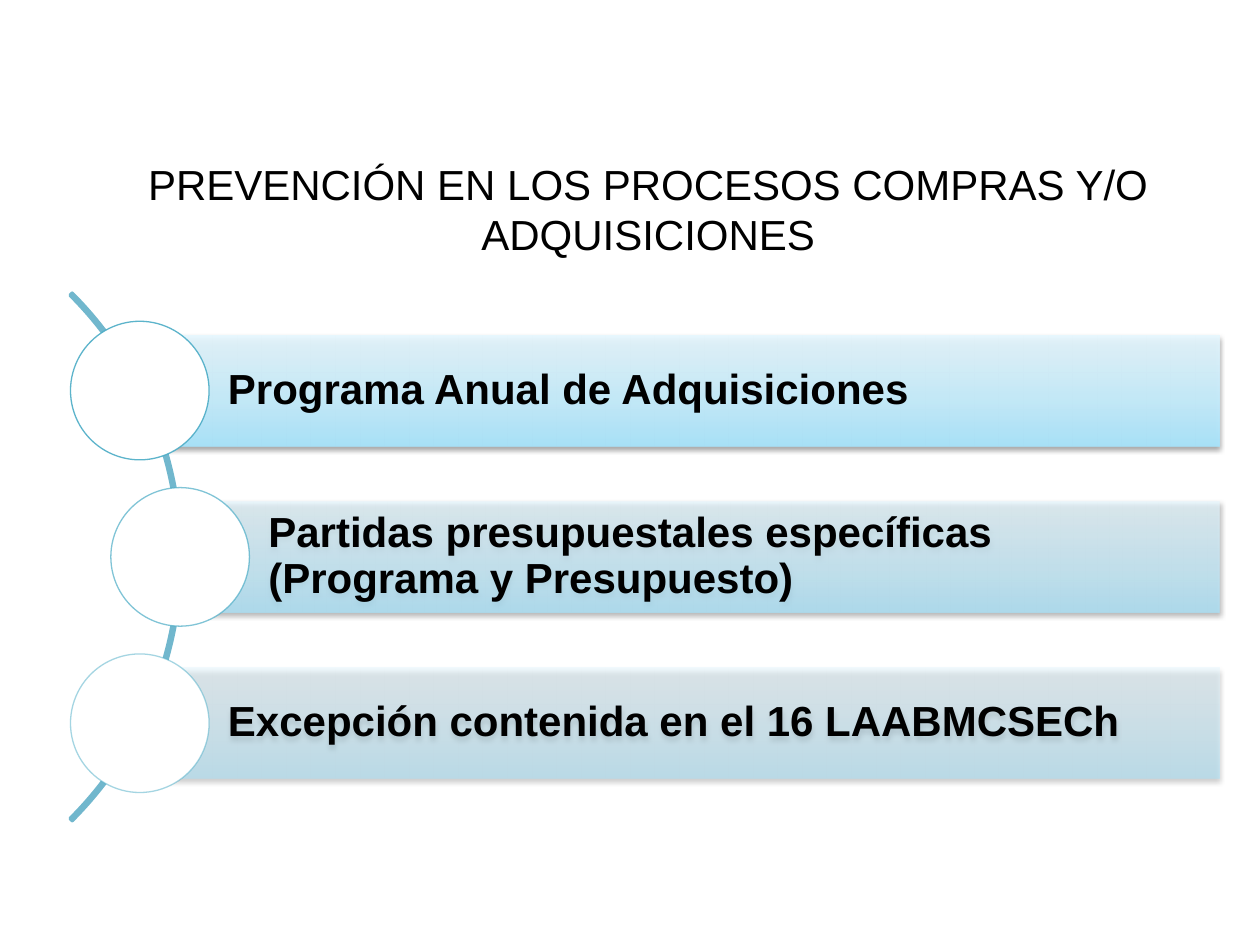
from dataclasses import dataclass

from lxml import etree
from pptx import Presentation
from pptx.dml.color import RGBColor
from pptx.enum.shapes import MSO_SHAPE
from pptx.enum.text import MSO_ANCHOR, MSO_AUTO_SIZE, PP_ALIGN
from pptx.oxml.ns import qn
from pptx.util import Inches, Pt

RECTANGLE, OVAL, BLOCK_ARC = MSO_SHAPE.RECTANGLE, MSO_SHAPE.OVAL, MSO_SHAPE.BLOCK_ARC
MIDDLE, NO_AUTOFIT = MSO_ANCHOR.MIDDLE, MSO_AUTO_SIZE.NONE
LEFT, CENTER = PP_ALIGN.LEFT, PP_ALIGN.CENTER


@dataclass(frozen=True)
class Theme:
    font: str = "Arial"
    size: int = 24
    text: str = "000000"
    circle_fill: str = "FFFFFF"
    circle_line: str = "4BACC6"
    arc: str = "71B7CD"
    shadow: str = "000000"
    gradient: tuple[tuple[int, str], ...] = ((0, "A7E6FF"), (35, "C1EDFF"), (100, "E7F8FF"))


@dataclass(frozen=True)
class Topic:
    label: str
    center_x: float
    opacity: int


THEME = Theme()
TOPICS = (
    Topic("Programa Anual de Adquisiciones", 1.11, 90),
    Topic("Partidas presupuestales específicas (Programa y Presupuesto)", 1.43, 70),
    Topic("Excepción contenida en el 16 LAABMCSECh", 1.11, 50),
)
ARC_CENTER_X, ARC_CENTER_Y, ARC_DIAMETER = -1.52, 4.42, 5.92
ROW_PITCH, BAR_HEIGHT, BAR_RIGHT, CIRCLE_DIAMETER = 1.32, 0.88, 9.68, 1.1


def write_text(shape, text: str, *, bold=False, align=LEFT, line_spacing=1.0,
               insets=(0.1, 0.05, 0.1, 0.05)) -> None:
    frame = shape.text_frame
    frame.word_wrap = True
    frame.auto_size = NO_AUTOFIT
    frame.vertical_anchor = MIDDLE
    frame.margin_left, frame.margin_top, frame.margin_right, frame.margin_bottom = map(Inches, insets)
    frame.text = text
    paragraph = frame.paragraphs[0]
    paragraph.alignment = align
    paragraph.line_spacing = line_spacing
    font = paragraph.runs[0].font
    font.name, font.size, font.bold = THEME.font, Pt(THEME.size), bold
    font.color.rgb = RGBColor.from_string(THEME.text)


def add_color(parent, color: str, opacity: int) -> None:
    node = etree.SubElement(parent, qn("a:srgbClr"), val=color)
    etree.SubElement(node, qn("a:alpha"), val=str(opacity * 1000))


def add_flat_shape(slide, preset, left: float, top: float, width: float, height: float):
    shape = slide.shapes.add_shape(preset, *map(Inches, (left, top, width, height)))
    shape.shadow.inherit = False
    return shape


def add_arc(slide) -> None:
    radius = ARC_DIAMETER / 2
    arc = add_flat_shape(slide, BLOCK_ARC, ARC_CENTER_X - radius, ARC_CENTER_Y - radius,
                         ARC_DIAMETER, ARC_DIAMETER)
    for index, value in enumerate((189, 27, 0.004)):
        arc.adjustments[index] = value
    arc.fill.background()
    arc.line.color.rgb = RGBColor.from_string(THEME.arc)
    arc.line.width = Pt(2)


def add_bar(slide, topic: Topic, center_y: float) -> None:
    bar = add_flat_shape(slide, RECTANGLE, topic.center_x, center_y - BAR_HEIGHT / 2,
                         BAR_RIGHT - topic.center_x, BAR_HEIGHT)
    bar.line.fill.background()
    bar.fill.gradient()
    bar.fill.gradient_angle = 90
    properties = bar._element.spPr
    stops = properties.find(f"{qn('a:gradFill')}/{qn('a:gsLst')}")
    for stop in list(stops):
        stops.remove(stop)
    for position, color in THEME.gradient:
        add_color(etree.SubElement(stops, qn("a:gs"), pos=str(position * 1000)), color, topic.opacity)
    shadow = etree.SubElement(properties.find(qn("a:effectLst")), qn("a:outerShdw"),
                              blurRad=str(Pt(3.1)), dist=str(Pt(1.6)), dir="5400000", rotWithShape="0")
    add_color(shadow, THEME.shadow, 38)
    write_text(bar, topic.label, bold=True, line_spacing=0.9, insets=(0.7, 0.07, 0.07, 0.07))


def add_circle(slide, topic: Topic, center_y: float) -> None:
    radius = CIRCLE_DIAMETER / 2
    circle = add_flat_shape(slide, OVAL, topic.center_x - radius, center_y - radius,
                            CIRCLE_DIAMETER, CIRCLE_DIAMETER)
    circle.fill.solid()
    circle.fill.fore_color.rgb = RGBColor.from_string(THEME.circle_fill)
    circle.line.width = Pt(0.75)
    circle.line.fill.solid()
    circle.line.color.rgb = RGBColor.from_string(THEME.circle_line)
    color = circle._element.spPr.find(f"{qn('a:ln')}/{qn('a:solidFill')}/{qn('a:srgbClr')}")
    etree.SubElement(color, qn("a:alpha"), val=str(topic.opacity * 1000))


def main() -> None:
    presentation = Presentation()
    presentation.slide_width, presentation.slide_height = Inches(10), Inches(7.5)
    slide = presentation.slides.add_slide(presentation.slide_layouts[5])

    title = slide.shapes.title
    title.left, title.top, title.width, title.height = map(Inches, (0.81, 1.2, 8.67, 0.91))
    write_text(title, "PREVENCIÓN EN LOS PROCESOS COMPRAS Y/O ADQUISICIONES", align=CENTER)

    add_arc(slide)
    for row, topic in enumerate(TOPICS):
        center_y = ARC_CENTER_Y + (row - 1) * ROW_PITCH
        add_bar(slide, topic, center_y)
        add_circle(slide, topic, center_y)

    presentation.save("out.pptx")


if __name__ == "__main__":
    main()
